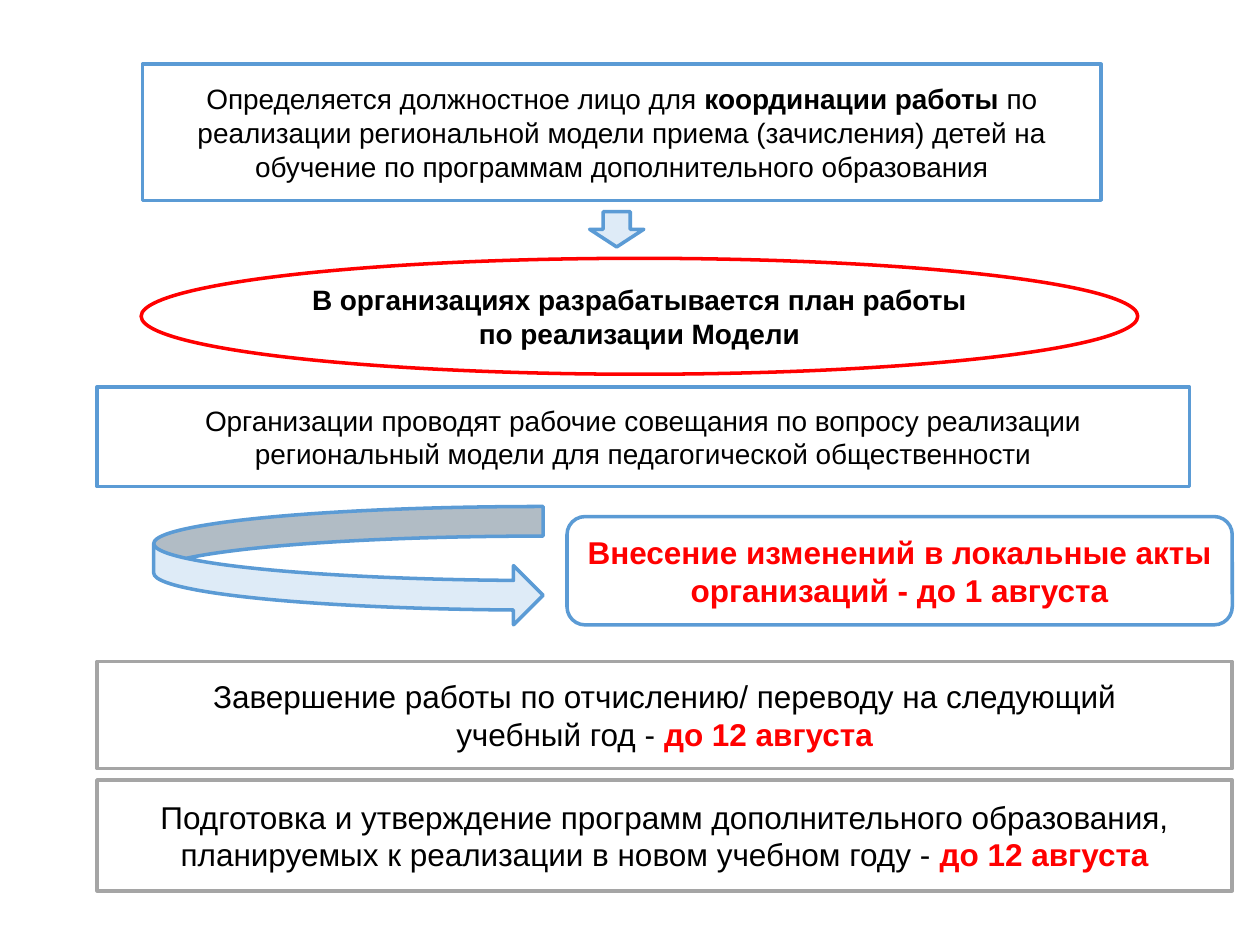
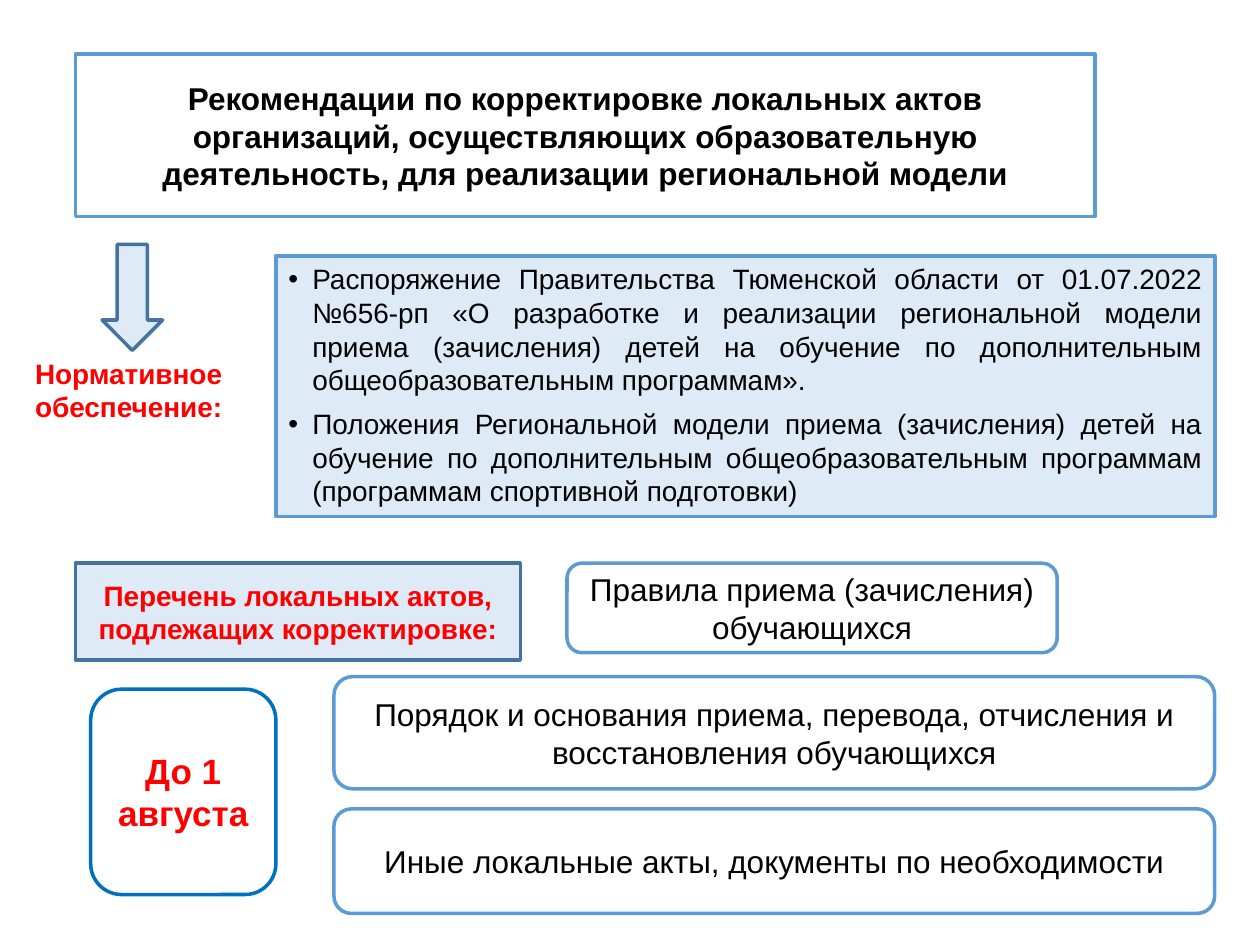
from dataclasses import dataclass

from lxml import etree
from pptx import Presentation
from pptx.dml.color import RGBColor
from pptx.enum.shapes import MSO_SHAPE
from pptx.enum.text import MSO_ANCHOR, MSO_AUTO_SIZE, PP_ALIGN
from pptx.oxml.ns import qn
from pptx.util import Inches, Pt

RECT, ROUNDED, OVAL = MSO_SHAPE.RECTANGLE, MSO_SHAPE.ROUNDED_RECTANGLE, MSO_SHAPE.OVAL
DOWN_ARROW, CURVED_ARROW = MSO_SHAPE.DOWN_ARROW, MSO_SHAPE.CURVED_RIGHT_ARROW
LEFT, CENTER, JUSTIFY = PP_ALIGN.LEFT, PP_ALIGN.CENTER, PP_ALIGN.JUSTIFY
TOP, MIDDLE = MSO_ANCHOR.TOP, MSO_ANCHOR.MIDDLE
NO_AUTOFIT = MSO_AUTO_SIZE.NONE
TITLE_ONLY, BLANK = 5, 6

# The slide is a grid of 100 columns by 75 rows
COLUMNS, ROWS = 100, 75
WIDTH, HEIGHT = Inches(10), Inches(7.5)


@dataclass(frozen=True)
class Theme:
    font: str = "Arial"
    ink: str = "000000"
    accent: str = "FF0000"
    paper: str = "FFFFFF"
    tint: str = "DEEBF7"
    blue: str = "5B9BD5"
    dark_blue: str = "43739E"
    bright_blue: str = "0070C0"
    gray: str = "A5A5A5"
    body: int = 16
    large: int = 18
    deadline: int = 20
    line: float = 2
    bold_line: float = 2.25


THEME = Theme()


@dataclass(frozen=True)
class Box:
    """An area in grid columns and rows."""
    col: float
    row: float
    cols: float
    rows: float

    def inner(self, col, row, cols, rows):
        return Box(self.col + col, self.row + row, cols, rows)

    def stack(self, heights, gap):
        row = 0
        for height in heights:
            yield self.inner(0, row, self.cols, height)
            row += height + gap

    def emu(self):
        return (int(WIDTH * self.col / COLUMNS), int(HEIGHT * self.row / ROWS),
                int(WIDTH * self.cols / COLUMNS), int(HEIGHT * self.rows / ROWS))


def rgb(color):
    return RGBColor.from_string(color)


def strong(text, color=THEME.ink):
    """A bold run within a paragraph."""
    return text, color


def add_bullet(paragraph):
    properties = paragraph._p.get_or_add_pPr()
    properties.set("marL", str(Inches(0.19)))
    properties.set("indent", str(-Inches(0.19)))
    etree.SubElement(properties, qn("a:buFont"), typeface=THEME.font)
    etree.SubElement(properties, qn("a:buChar"), char="•")


def write(frame, paragraphs, size, color=THEME.ink, bold=False,
          align=CENTER, anchor=MIDDLE, bullets=False):
    """Each paragraph is a list of plain strings and strong() runs."""
    frame.word_wrap = True
    frame.auto_size = NO_AUTOFIT
    frame.vertical_anchor = anchor
    for index, pieces in enumerate(paragraphs):
        paragraph = frame.add_paragraph() if index else frame.paragraphs[0]
        paragraph.alignment = align
        if bullets:
            paragraph.space_after = Pt(6)
            add_bullet(paragraph)
        font = paragraph.font
        font.name, font.size, font.bold = THEME.font, Pt(size), bold
        font.color.rgb = rgb(color)
        for piece in pieces:
            run = paragraph.add_run()
            if isinstance(piece, str):
                run.text = piece
            else:
                run.text, run_color = piece
                run.font.bold = True
                run.font.color.rgb = rgb(run_color)


def paint(shape, fill, line, width=THEME.line):
    shape.fill.solid()
    shape.fill.fore_color.rgb = rgb(fill)
    shape.line.color.rgb = rgb(line)
    shape.line.width = Pt(width)


def add_panel(slide, kind, box, fill=THEME.paper, line=THEME.blue, width=THEME.line):
    panel = slide.shapes.add_shape(kind, *box.emu())
    panel.shadow.inherit = False
    paint(panel, fill, line, width)
    return panel


# Slide 1: work plan

def place_preparation(slide, area):
    coordinator = add_panel(slide, RECT, area.inner(3.6, 0, 76.1, 10.8))
    write(coordinator.text_frame, [[
        "Определяется должностное лицо для ", strong("координации работы "),
        "по реализации региональной модели приема (зачисления) детей на обучение "
        "по программам дополнительного образования"]], THEME.body)

    add_panel(slide, DOWN_ARROW, area.inner(39.1, 11.7, 4.3, 2.8), THEME.tint)

    plan = add_panel(slide, OVAL, area.inner(3.5, 15.4, 79.1, 9.2), line=THEME.accent)
    write(plan.text_frame,
          [["В организациях разрабатывается план работы по реализации Модели"]],
          THEME.body, bold=True)

    meetings = add_panel(slide, RECT, area.inner(0, 25.6, 86.7, 7.9))
    write(meetings.text_frame, [[
        "Организации проводят рабочие совещания по вопросу реализации "
        "региональный модели для педагогической общественности"]], THEME.body)


def place_amendments(slide, area):
    add_panel(slide, CURVED_ARROW, area.inner(0, 0, 30.9, area.rows), THEME.tint)
    amendments = add_panel(slide, ROUNDED, area.inner(32.8, 0.8, 52.8, 8.6))
    write(amendments.text_frame,
          [["Внесение изменений в локальные акты организаций - до 1 августа"]],
          THEME.large, THEME.accent, bold=True)


def place_deadlines(slide, area):
    due = strong("до 12 августа", THEME.accent)
    tasks = [
        [["Завершение работы по отчислению/ переводу на следующий"],
         ["учебный год - ", due]],
        [["Подготовка и утверждение программ дополнительного образования, "
          "планируемых к реализации в новом учебном году - ", due]],
    ]
    for task, box in zip(tasks, area.stack([8.5, 8.8], 0.9)):
        write(add_panel(slide, RECT, box, line=THEME.gray).text_frame, task, THEME.large)


def build_work_plan(deck):
    slide = deck.slides.add_slide(deck.slide_layouts[BLANK])
    place_preparation(slide, Box(7.7, 5.1, 90.1, 33.5))
    place_amendments(slide, Box(12.2, 40.2, 85.6, 9.4))
    place_deadlines(slide, Box(7.7, 52.5, 90.1, 18.2))


# Slide 2: recommendations on local acts

def place_title(slide, area):
    title = slide.shapes.title
    title.left, title.top, title.width, title.height = area.emu()
    paint(title, THEME.paper, THEME.blue)
    write(title.text_frame, [[
        "Рекомендации по корректировке локальных актов организаций, осуществляющих "
        "образовательную деятельность, для реализации региональной модели"]],
        THEME.large, bold=True)


def place_regulations(slide, area):
    add_panel(slide, DOWN_ARROW, area.inner(6.3, 0, 4.8, 8.4), THEME.tint, THEME.dark_blue)

    heading = slide.shapes.add_textbox(*area.inner(0, 8.4, 17.6, 6.4).emu())
    write(heading.text_frame, [["Нормативное обеспечение:"]], THEME.body, THEME.accent,
          bold=True, align=LEFT, anchor=TOP)

    regulations = add_panel(slide, RECT, area.inner(20.1, 0.9, 74.5, 20.7),
                            THEME.tint, width=THEME.bold_line)
    write(regulations.text_frame, [
        ["Распоряжение Правительства Тюменской области от 01.07.2022 №656-рп "
         "«О разработке и реализации региональной модели приема (зачисления) детей "
         "на обучение по дополнительным общеобразовательным программам»."],
        ["Положения Региональной модели приема (зачисления) детей на обучение "
         "по дополнительным общеобразовательным программам "
         "(программам спортивной подготовки)"],
    ], THEME.body, align=JUSTIFY, anchor=TOP, bullets=True)


def place_local_acts(slide, area):
    heading = add_panel(slide, RECT, area.inner(0, 0, 35.3, 7.7),
                        THEME.tint, THEME.dark_blue)
    write(heading.text_frame, [["Перечень локальных актов, подлежащих корректировке:"]],
          THEME.body, THEME.accent, bold=True)

    deadline = add_panel(slide, ROUNDED, area.inner(1.2, 10, 14.7, 16.3),
                         line=THEME.bright_blue)
    write(deadline.text_frame, [["До 1 августа"]], THEME.deadline, THEME.accent, bold=True)

    acts = [
        ("Правила приема (зачисления) обучающихся", area.inner(39, 0, 38.9, 7.1)),
        ("Порядок и основания приема, перевода, отчисления и восстановления обучающихся",
         area.inner(20.5, 9, 69.9, 8.9)),
        ("Иные локальные акты, документы по необходимости",
         area.inner(20.5, 19.5, 69.9, 8.3)),
    ]
    for act, box in acts:
        write(add_panel(slide, ROUNDED, box).text_frame, [[act]], THEME.large)


def build_recommendations(deck):
    slide = deck.slides.add_slide(deck.slide_layouts[TITLE_ONLY])
    place_title(slide, Box(6, 4.3, 80.9, 12.9))
    place_regulations(slide, Box(1.8, 19.4, 94.6, 21.6))
    place_local_acts(slide, Box(6, 44.7, 90.4, 27.8))


def main():
    deck = Presentation()
    deck.slide_width, deck.slide_height = WIDTH, HEIGHT
    build_work_plan(deck)
    build_recommendations(deck)
    deck.save("out.pptx")


if __name__ == "__main__":
    main()
